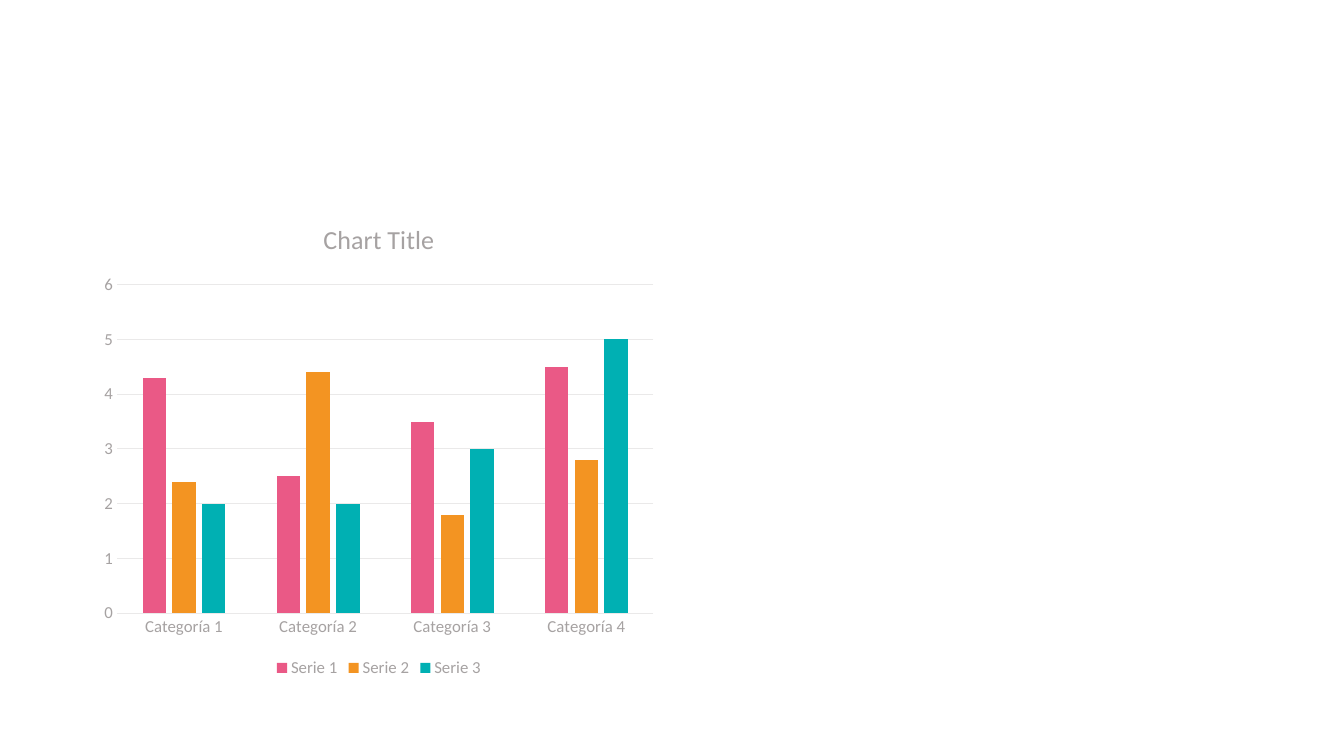
from pptx import Presentation
from pptx import util as u
from pptx.chart.data import CategoryChartData
from pptx.dml.color import RGBColor
from pptx.enum import chart as charts

PX = 914400 / 100.8
FONT = "Calibri"
COLORS = {"label": "A6A2A2", "grid": "EAE9E9", "base": "757070"}
CATEGORIES = [f"Categoría {number}" for number in range(1, 5)]
SERIES = [
    ("Serie 1", (4.3, 2.5, 3.5, 4.5), "EA5986"),
    ("Serie 2", (2.4, 4.4, 1.8, 2.8), "F39422"),
    ("Serie 3", (2, 2, 3, 5), "00B0B3"),
]


def px(length):
    return u.Emu(round(length * PX))


def set_font(font, size, color):
    for name, value in {"name": FONT, "size": u.Pt(size), "bold": False}.items():
        setattr(font, name, value)
    font.color.rgb = RGBColor.from_string(color)


def set_line(line):
    line.width = u.Pt(0.75)
    line.color.rgb = RGBColor.from_string(COLORS["grid"])


def style_axes(chart):
    for axis in (chart.category_axis, chart.value_axis):
        axis.major_tick_mark = axis.minor_tick_mark = charts.XL_TICK_MARK.NONE
        set_font(axis.tick_labels.font, 12, COLORS["label"])
    set_line(chart.category_axis.format.line)

    values = chart.value_axis
    for name, value in {"minimum_scale": 0, "maximum_scale": 6, "major_unit": 1,
                        "has_major_gridlines": True}.items():
        setattr(values, name, value)
    values.format.line.fill.background()
    set_line(values.major_gridlines.format.line)


def style_title_and_legend(chart):
    chart.has_title = True
    para = chart.chart_title.text_frame.paragraphs[0]
    span = para.add_run()
    span.text = "Chart Title"
    set_font(span.font, 18.6, COLORS["label"])
    chart.chart_title.include_in_layout = False

    chart.has_legend = True
    chart.legend.position = charts.XL_LEGEND_POSITION.BOTTOM
    chart.legend.include_in_layout = False
    set_font(chart.legend.font, 12, COLORS["label"])


def add_column_chart(page, box):
    data = CategoryChartData()
    data.categories = CATEGORIES
    for name, values, _ in SERIES:
        data.add_series(name, values)
    frame = page.shapes.add_chart(
        charts.XL_CHART_TYPE.COLUMN_CLUSTERED, *map(px, box), data)
    chart = frame.chart
    set_font(chart.font, 10, COLORS["base"])

    plot = chart.plots[0]
    for name, value in {"gap_width": 219, "overlap": -27,
                        "vary_by_categories": False}.items():
        setattr(plot, name, value)
    for series, (_, _, color) in zip(plot.series, SERIES):
        series.invert_if_negative = False
        series.format.fill.solid()
        series.format.fill.fore_color.rgb = RGBColor.from_string(color)

    style_axes(chart)
    style_title_and_legend(chart)


def main():
    deck = Presentation()
    deck.slide_width, deck.slide_height = px(1344), px(756)
    page = deck.slides.add_slide(deck.slide_layouts[6])
    add_column_chart(page, (93, 202, 572, 480))
    deck.save("out.pptx")


if __name__ == "__main__":
    main()
